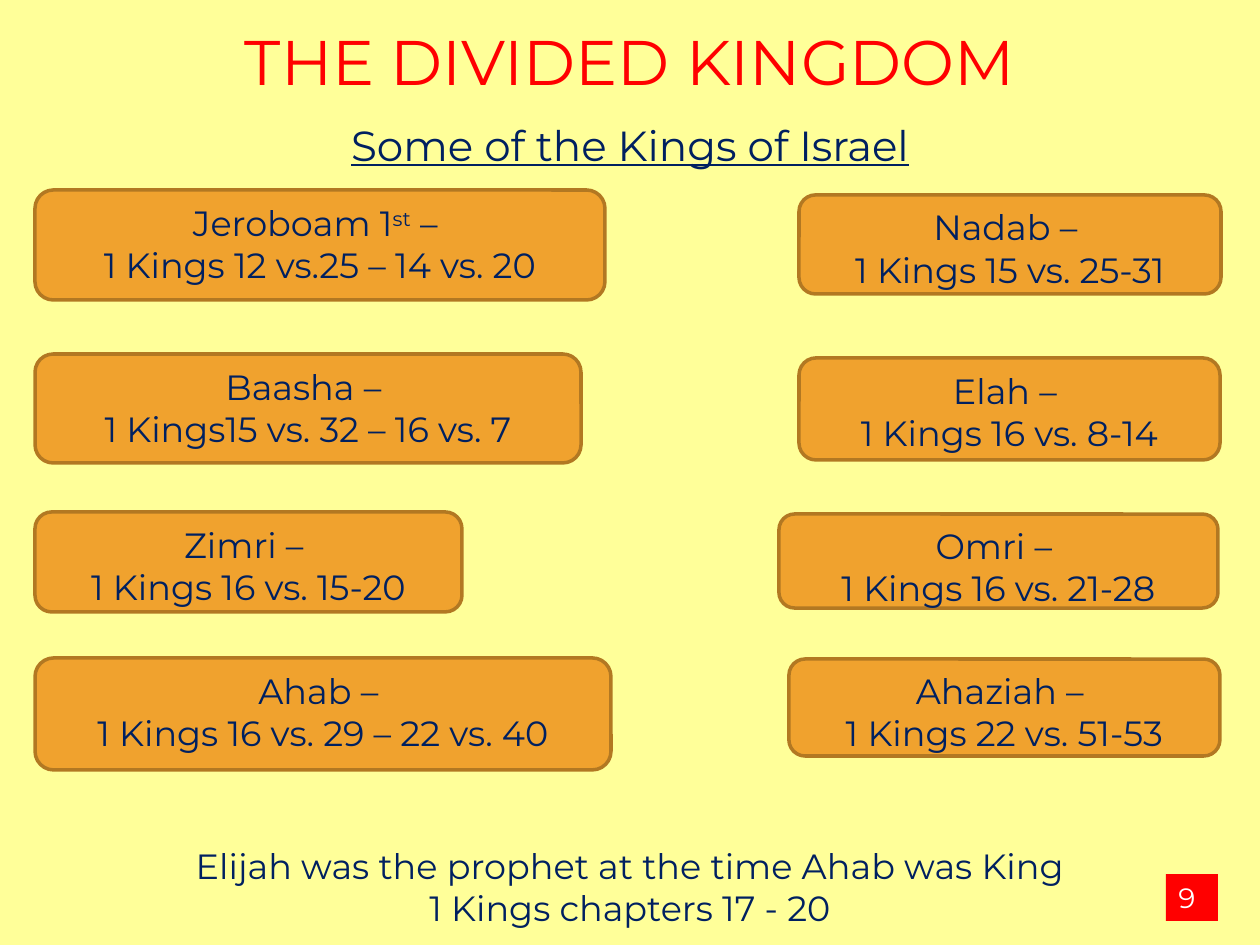
import pptx
import pptx.dml.color
import pptx.enum.shapes
import pptx.enum.text
import pptx.util

RGBColor = pptx.dml.color.RGBColor
PALE_YELLOW = RGBColor(0xFF, 0xFF, 0x99)
RED = RGBColor(0xFF, 0x00, 0x00)
NAVY = RGBColor(0x00, 0x20, 0x60)
ORANGE = RGBColor(0xF0, 0xA2, 0x2E)
BROWN = RGBColor(0xB2, 0x78, 0x22)
WHITE = RGBColor(0xFF, 0xFF, 0xFF)

SHAPES = pptx.enum.shapes.MSO_SHAPE
ALIGN = pptx.enum.text.PP_ALIGN
EMU_PER_PX = 914400 / 126
SLIDE_WIDTH, SLIDE_HEIGHT = 1260, 945

# name, superscript, reference, (left, top, width, height)
KINGS = [
    ("Jeroboam 1", "st", "1 Kings 12 vs.25 – 14 vs. 20", (35, 190, 570, 110)),
    ("Nadab", "", "1 Kings 15 vs. 25-31", (799, 195, 422, 99)),
    ("Baasha", "", "1 Kings15 vs. 32 – 16 vs. 7", (35, 354, 546, 109)),
    ("Elah", "", "1 Kings 16 vs. 8-14", (799, 358, 421, 102)),
    ("Zimri", "", "1 Kings 16 vs. 15-20", (35, 512, 427, 100)),
    ("Omri", "", "1 Kings 16 vs. 21-28", (779, 514, 439, 94)),
    ("Ahab", "", "1 Kings 16 vs. 29 – 22 vs. 40", (35, 658, 576, 112)),
    ("Ahaziah", "", "1 Kings 22 vs. 51-53", (789, 659, 431, 97)),
]


def px(*lengths):
    return [pptx.util.Emu(round(length * EMU_PER_PX)) for length in lengths]


class SlideBuilder:
    def __init__(self, slide):
        self.slide = slide
        self.font_name = "Montserrat"

    def fill_text(self, shape, lines, size, color, align=ALIGN.CENTER, **extra):
        """Fill a shape with lines, each a list of (text, is_superscript) spans."""
        frame = shape.text_frame
        frame_format = {
            "word_wrap": True,
            "auto_size": pptx.enum.text.MSO_AUTO_SIZE.NONE,
            "vertical_anchor": pptx.enum.text.MSO_ANCHOR.TOP,
        }
        for name, value in frame_format.items():
            setattr(frame, name, value)
        font_format = {"name": self.font_name, "size": pptx.util.Pt(size), **extra}
        for index, line in enumerate(lines):
            para = frame.add_paragraph() if index else frame.paragraphs[0]
            para.alignment = align
            for text, is_superscript in line:
                span = para.add_run()
                span.text = text
                for name, value in font_format.items():
                    setattr(span.font, name, value)
                span.font.color.rgb = color
                if is_superscript:
                    span._r.get_or_add_rPr().set("baseline", "30000")

    def title(self, text, area):
        box = self.slide.shapes.title
        box.left, box.top, box.width, box.height = px(*area)
        self.fill_text(box, [[(text, False)]], 36, RED)

    def text(self, lines, area, size, **extra):
        box = self.slide.shapes.add_textbox(*px(*area))
        self.fill_text(box, [[(line, False)] for line in lines], size, NAVY, **extra)

    def shape(self, kind, area, fill, line=None):
        box = self.slide.shapes.add_shape(kind, *px(*area))
        box.shadow.inherit = False
        box.fill.solid()
        box.fill.fore_color.rgb = fill
        if line is None:
            box.line.fill.background()
        else:
            box.line.color.rgb = line
            box.line.width = pptx.util.Pt(2)
        return box

    def king(self, name, superscript, reference, area):
        box = self.shape(SHAPES.ROUNDED_RECTANGLE, area, ORANGE, BROWN)
        if superscript:
            heading = [(name, False), (superscript, True), (" – ", False)]
        else:
            heading = [(f"{name} – ", False)]
        self.fill_text(box, [heading, [(reference, False)]], 20, NAVY)

    def page_number(self, number, area):
        box = self.shape(SHAPES.RECTANGLE, area, RED)
        self.fill_text(box, [[(number, False)]], 16, WHITE, ALIGN.LEFT)


def main():
    deck = pptx.Presentation()
    deck.slide_width, deck.slide_height = px(SLIDE_WIDTH, SLIDE_HEIGHT)
    page = deck.slides.add_slide(deck.slide_layouts[5])
    page.background.fill.solid()
    page.background.fill.fore_color.rgb = PALE_YELLOW

    builder = SlideBuilder(page)
    builder.title("THE DIVIDED KINGDOM", (0, 16, SLIDE_WIDTH, 89))
    builder.text(
        ["Elijah was the prophet at the time Ahab was King", "1 Kings chapters 17 - 20"],
        (0, 838, SLIDE_WIDTH, 97), 20)
    builder.text(["Some of the Kings of Israel"], (0, 113, SLIDE_WIDTH, 63), 24,
                 underline=True)
    for king in KINGS:
        builder.king(*king)
    builder.page_number("9", (1166, 874, 52, 47))
    deck.save("out.pptx")


if __name__ == "__main__":
    main()
